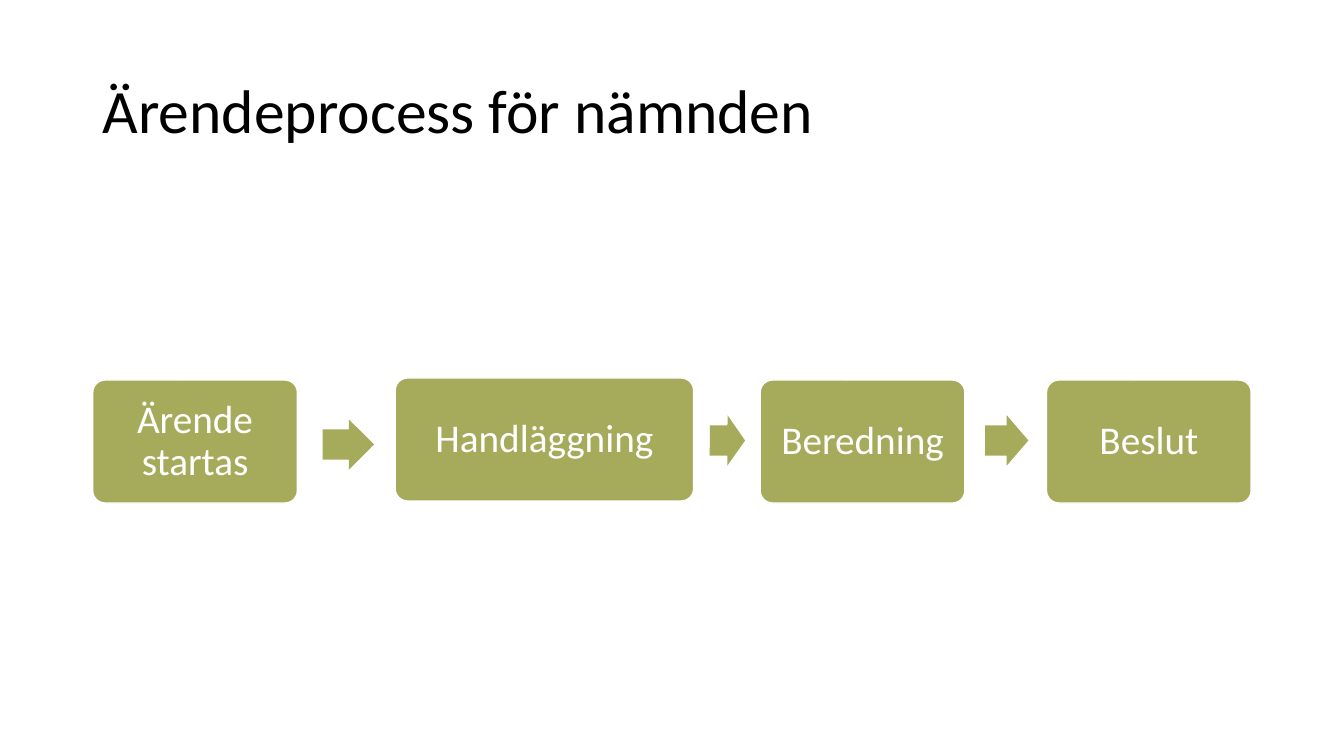
import pptx
import pptx.util
import pptx.dml.color
import pptx.enum.shapes
import pptx.enum.text

SCALE = 9144  # EMU per px, 100 px to the inch
FONT = "Calibri"
HUES = {"ink": "000000", "paper": "FFFFFF", "olive": "A6AB5C"}
KINDS = pptx.enum.shapes.MSO_SHAPE
ALIGN = pptx.enum.text.PP_ALIGN

# Steps: text, left, top, width
STEPS = [
    ("Ärende startas", 92, 377, 203),
    ("Handläggning", 392, 375, 296),
    ("Beredning", 754, 377, 203),
    ("Beslut", 1038, 377, 203),
]
STEP_H = 122
# Arrows: left, top, width, turn in degrees
ARROWS = [(320, 416, 51, 359.8), (704, 412, 35, 0.3), (977, 412, 43, 0)]
ARROW_H = 50


def px(num):
    return pptx.util.Emu(num * SCALE)


def hue(name):
    return pptx.dml.color.RGBColor.from_string(HUES[name])


def write(shape, text, size=28, color="paper", align=ALIGN.CENTER, inset=None):
    frame = shape.text_frame
    frame.word_wrap = True
    frame.vertical_anchor = pptx.enum.text.MSO_ANCHOR.MIDDLE
    if inset is not None:
        frame.margin_left = frame.margin_right = px(inset)
        frame.margin_top = frame.margin_bottom = px(inset)
    para = frame.paragraphs[0]
    para.text = text
    para.alignment = align
    para.line_spacing = 0.9
    para.font.name = FONT
    para.font.size = pptx.util.Pt(size)
    para.font.color.rgb = hue(color)


def block(slide, kind, box, adjust):
    shape = slide.shapes.add_shape(kind, *map(px, box))
    shape.shadow.inherit = False
    shape.fill.solid()
    shape.fill.fore_color.rgb = hue("olive")
    for idx, value in enumerate(adjust):
        shape.adjustments[idx] = value
    return shape


def step(slide, text, left, top, width):
    shape = block(slide, KINDS.ROUNDED_RECTANGLE, (left, top, width, STEP_H), [0.1])
    shape.line.color.rgb = hue("paper")
    shape.line.width = pptx.util.Pt(1)
    write(shape, text, inset=15)


def arrow(slide, left, top, width, turn):
    shape = block(slide, KINDS.RIGHT_ARROW, (left, top, width, ARROW_H), [0.6, 0.5])
    shape.line.fill.background()
    shape.rotation = turn


def main():
    deck = pptx.Presentation()
    deck.slide_width, deck.slide_height = px(1333), px(750)
    slide = deck.slides.add_slide(deck.slide_layouts[6])

    # Title
    title = slide.shapes.add_textbox(px(92), px(40), px(1150), px(145))
    write(title, "Ärendeprocess för nämnden", size=44, color="ink", align=ALIGN.LEFT)

    # Process chain
    for item in STEPS:
        step(slide, *item)
    for item in ARROWS:
        arrow(slide, *item)

    deck.save("out.pptx")


if __name__ == "__main__":
    main()
